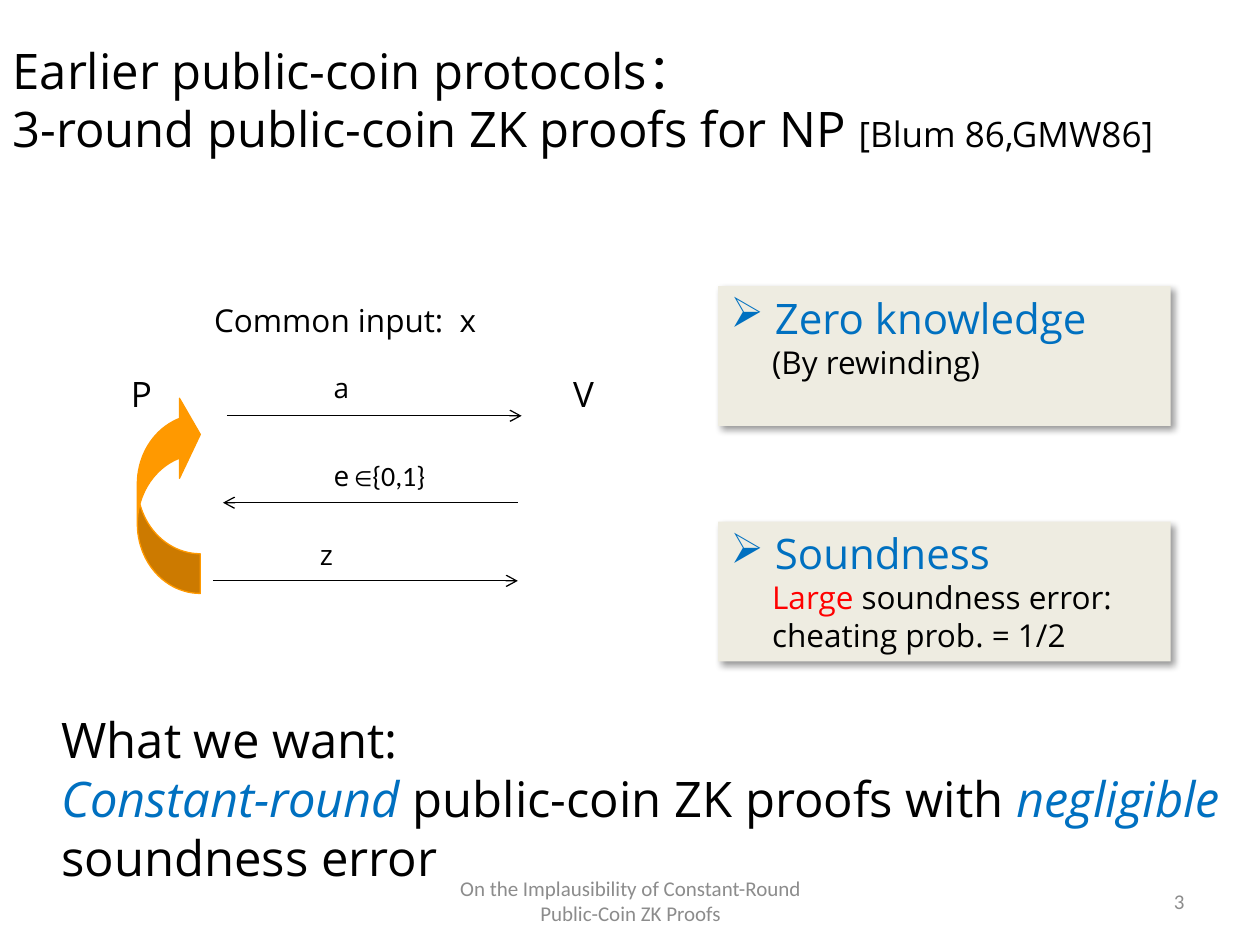
from lxml import etree
from pptx import Presentation
from pptx.dml.color import RGBColor
from pptx.enum.shapes import MSO_CONNECTOR, MSO_SHAPE
from pptx.enum.text import MSO_ANCHOR, MSO_AUTO_SIZE, PP_ALIGN
from pptx.oxml import parse_xml
from pptx.oxml.ns import nsdecls, qn
from pptx.util import Inches, Pt

LEFT, CENTER, RIGHT = PP_ALIGN.LEFT, PP_ALIGN.CENTER, PP_ALIGN.RIGHT
TOP, MIDDLE = MSO_ANCHOR.TOP, MSO_ANCHOR.MIDDLE
NO_AUTOFIT = MSO_AUTO_SIZE.NONE
RECTANGLE, CURVED_ARROW = MSO_SHAPE.RECTANGLE, MSO_SHAPE.CURVED_DOWN_ARROW
STRAIGHT = MSO_CONNECTOR.STRAIGHT

BLACK = RGBColor(0x00, 0x00, 0x00)
BLUE = RGBColor(0x00, 0x70, 0xC0)
RED = RGBColor(0xFF, 0x00, 0x00)
ORANGE = RGBColor(0xFF, 0x99, 0x00)
CREAM = RGBColor(0xEE, 0xEC, 0xE1)
GRAY = RGBColor(0x8C, 0x8C, 0x8C)
BODY_FONT, SMALL_FONT = "Open Sans", "Calibri"


def styled(text, size, color=BLACK, font=BODY_FONT, italic=False):
    return text, size, color, font, italic


TITLE = [
    [styled("Earlier public-coin protocols：", 28)],
    [styled("3-round public-coin ZK proofs for NP ", 28), styled("[Blum 86,GMW86]", 20)],
]
GOAL = [
    [styled("What we want:", 28)],
    [
        styled("Constant-round", 28, BLUE, italic=True),
        styled(" public-coin ZK proofs with ", 28),
        styled("negligible ", 28, BLUE, italic=True),
        styled("soundness error", 28),
    ],
]
FOOTER = "On the Implausibility of Constant-Round Public-Coin ZK Proofs"
TEXT_BOXES = [
    ((0.39, 5.86, 9.6, 0.95), GOAL, LEFT, MIDDLE),
    ((1.14, 2.34, 3.2, 0.31), [[styled("Common input:  x", 18)]], CENTER, TOP),
    ((0.94, 2.91, 0.94, 0.39), [[styled("P", 20)]], LEFT, TOP),
    ((4.45, 2.91, 0.7, 0.39), [[styled("V", 20)]], LEFT, TOP),
    ((2.55, 2.89, 1.25, 0.37), [[styled("a", 16)]], LEFT, TOP),
    ((2.55, 3.59, 1.06, 0.37),
     [[styled("e", 16), styled(" ∈", 12, font=SMALL_FONT), styled("{0,1}", 16, font=SMALL_FONT)]],
     LEFT, TOP),
    ((2.44, 4.22, 1.43, 0.37), [[styled("z", 16)]], LEFT, TOP),
    ((3.42, 6.95, 3.17, 0.4), [[styled(FOOTER, 12, GRAY, SMALL_FONT)]], CENTER, MIDDLE),
    ((7.17, 6.95, 2.33, 0.4), [[styled("3", 12, GRAY, SMALL_FONT)]], RIGHT, MIDDLE),
]
MESSAGES = [(1.8, 4.14, 3.3), (4.11, 1.77, 3.99), (1.69, 4.11, 4.61)]
PROPERTIES = [
    (2.27, "Zero knowledge", [[styled("(By rewinding)", 18)]]),
    (4.14, "Soundness", [
        [styled("Large", 18, RED), styled(" soundness error:", 18)],
        [styled("cheating prob. = 1/2", 18)],
    ]),
]


def write(shape, paragraphs, align=LEFT, anchor=TOP):
    frame = shape.text_frame
    frame.word_wrap = True
    frame.auto_size = NO_AUTOFIT
    frame.vertical_anchor = anchor
    for index, runs in enumerate(paragraphs):
        paragraph = frame.add_paragraph() if index else frame.paragraphs[0]
        paragraph.alignment = align
        for text, size, color, font, italic in runs:
            run = paragraph.add_run()
            run.text = text
            run.font.size = Pt(size)
            run.font.color.rgb = color
            run.font.name = font
            run.font.italic = italic


def add_message(slide, start, end, top):
    arrow = slide.shapes.add_connector(
        STRAIGHT, Inches(start), Inches(top), Inches(end), Inches(top))
    arrow.line.color.rgb = BLACK
    arrow.line.width = Pt(0.75)
    etree.SubElement(arrow.line._get_or_add_ln(), qn("a:tailEnd"), type="arrow")
    etree.SubElement(arrow.element.spPr, qn("a:effectLst"))


def add_property(slide, top, heading, details):
    card = slide.shapes.add_shape(
        RECTANGLE, Inches(5.7), Inches(top), Inches(3.59), Inches(1.11))
    card.fill.solid()
    card.fill.fore_color.rgb = CREAM
    card.line.fill.background()
    card.shadow.inherit = False
    card.element.spPr.find(qn("a:effectLst")).append(parse_xml(
        f'<a:outerShdw {nsdecls("a")} blurRad="{Pt(4)}" dist="{Pt(3)}" dir="2700000" '
        'algn="tl" rotWithShape="0"><a:srgbClr val="000000"><a:alpha val="40000"/>'
        '</a:srgbClr></a:outerShdw>'))
    write(card, [[styled(" " + heading, 24, BLUE)]] + details)
    first, *rest = card.text_frame.paragraphs
    etree.SubElement(first._p.get_or_add_pPr(), qn("a:buChar"), char="➢")
    for paragraph in rest:
        paragraph._p.get_or_add_pPr().set("marL", str(Inches(0.33)))


def add_rewind_arrow(slide):
    arrow = slide.shapes.add_shape(
        CURVED_ARROW, Inches(0.55), Inches(3.67), Inches(1.58), Inches(0.5))
    arrow.rotation = 270
    for index, value in enumerate((0.63, 1.27, 0.33)):
        arrow.adjustments[index] = value
    arrow.fill.solid()
    arrow.fill.fore_color.rgb = ORANGE
    arrow.line.color.rgb = ORANGE
    arrow.line.width = Pt(0.75)
    arrow.shadow.inherit = False


def main():
    presentation = Presentation()
    presentation.slide_width, presentation.slide_height = Inches(10), Inches(7.5)
    slide = presentation.slides.add_slide(presentation.slide_layouts[5])

    title = slide.shapes.title
    title.left, title.top, title.width, title.height = map(Inches, (0, 0.31, 10, 0.95))
    write(title, TITLE, LEFT, MIDDLE)

    for bounds, paragraphs, align, anchor in TEXT_BOXES:
        write(slide.shapes.add_textbox(*map(Inches, bounds)), paragraphs, align, anchor)
    for message in MESSAGES:
        add_message(slide, *message)
    for entry in PROPERTIES:
        add_property(slide, *entry)
    add_rewind_arrow(slide)
    presentation.save("out.pptx")


if __name__ == "__main__":
    main()
